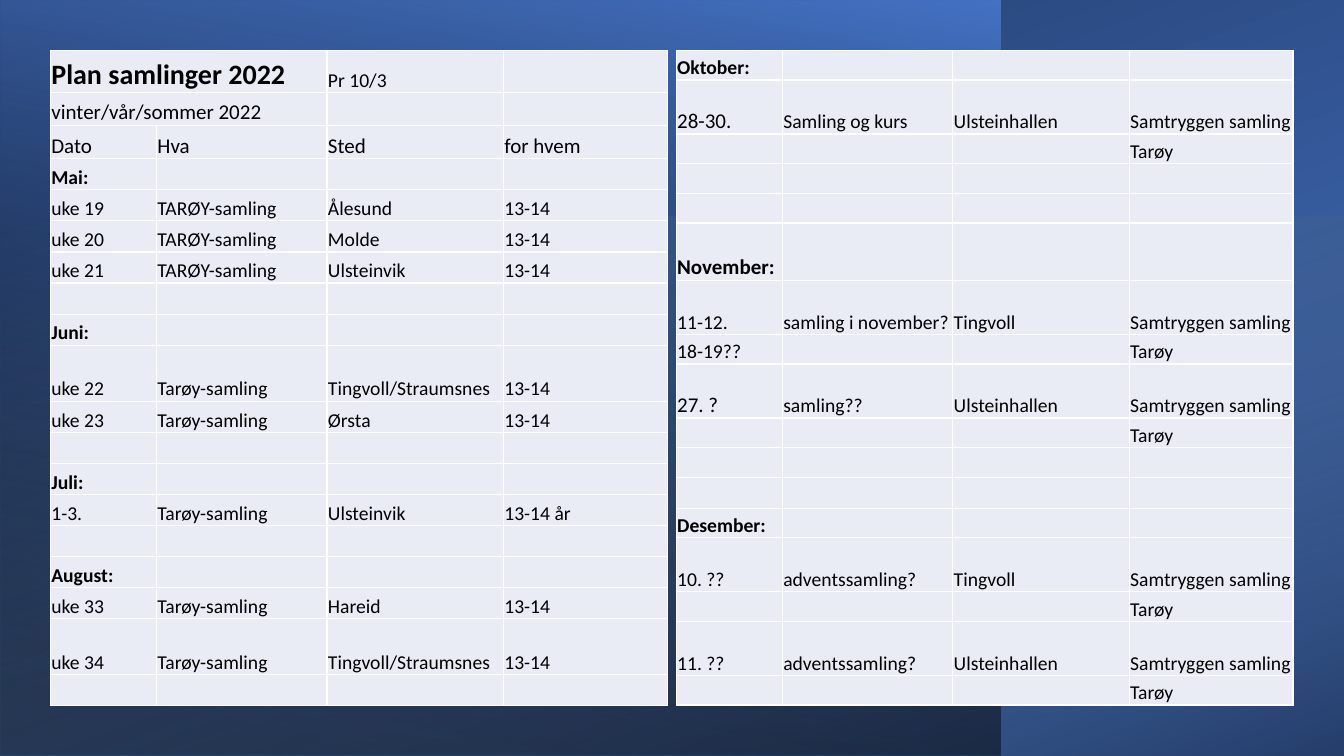
from lxml.etree import SubElement
from pptx import Presentation
from pptx.dml.color import RGBColor
from pptx.enum.shapes import MSO_SHAPE
from pptx.enum.text import MSO_ANCHOR
from pptx.oxml.ns import qn
from pptx.util import Pt

BLUE = RGBColor(0x44, 0x72, 0xC4)
NAVY = RGBColor(0x20, 0x38, 0x64)
SKY = RGBColor(0x9D, 0xC3, 0xE6)
BLACK = RGBColor(0, 0, 0)
WHITE = RGBColor(0xFF, 0xFF, 0xFF)
CELL_FILL = RGBColor(0xE9, 0xEB, 0xF5)

FONT = "Calibri"
TITLE = "Plan samlinger 2022"
SUBTITLE = "vinter/vår/sommer 2022"
BODY_SIZE = 14
LARGE_SIZE = 15
LARGE_TEXTS = {SUBTITLE, "Dato", "Hva", "Sted", "for hvem", "28-30.", "November:", "27. ?"}

COLUMN_WIDTHS = (75.8, 121.8, 126, 117)
TABLE_TOP = 36
SPRING_LEFT = 36
AUTUMN_LEFT = 483

SPRING_ROW = 22.2
SPRING_TALL = 40
SPRING_HEADING = 23.7
SPRING_PLAN = [
    (30, TITLE, "", "Pr 10/3"),
    (SPRING_HEADING, SUBTITLE),
    (SPRING_HEADING, "Dato", "Hva", "Sted", "for hvem"),
    (SPRING_ROW, "Mai:"),
    (SPRING_ROW, "uke 19", "TARØY-samling", "Ålesund", "13-14"),
    (SPRING_ROW, "uke 20", "TARØY-samling", "Molde", "13-14"),
    (SPRING_ROW, "uke 21", "TARØY-samling", "Ulsteinvik", "13-14"),
    (SPRING_ROW,),
    (SPRING_ROW, "Juni:"),
    (SPRING_TALL, "uke 22", "Tarøy-samling", "Tingvoll/Straumsnes", "13-14"),
    (SPRING_ROW, "uke 23", "Tarøy-samling", "Ørsta", "13-14"),
    (SPRING_ROW,),
    (SPRING_ROW, "Juli:"),
    (SPRING_ROW, "1-3.", "Tarøy-samling", "Ulsteinvik", "13-14 år"),
    (SPRING_ROW,),
    (SPRING_ROW, "August:"),
    (SPRING_ROW, "uke 33", "Tarøy-samling", "Hareid", "13-14"),
    (SPRING_TALL, "uke 34", "Tarøy-samling", "Tingvoll/Straumsnes", "13-14"),
    (SPRING_ROW,),
]

AUTUMN_ROW = 21.2
AUTUMN_TALL = 38.6
JOINT = "Samtryggen samling"
SPONSOR_ROW = (AUTUMN_ROW, "", "", "", "Tarøy")
AUTUMN_PLAN = [
    (AUTUMN_ROW, "Oktober:"),
    (AUTUMN_TALL, "28-30.", "Samling og kurs", "Ulsteinhallen", JOINT),
    SPONSOR_ROW,
    (AUTUMN_ROW,),
    (AUTUMN_ROW,),
    (41, "November:"),
    (AUTUMN_TALL, "11-12.", "samling i november?", "Tingvoll", JOINT),
    (AUTUMN_ROW, "18-19??", "", "", "Tarøy"),
    (AUTUMN_TALL, "27. ?", "samling??", "Ulsteinhallen", JOINT),
    SPONSOR_ROW,
    (AUTUMN_ROW,),
    (22, ),
    (AUTUMN_ROW, "Desember:"),
    (AUTUMN_TALL, "10. ??", "adventssamling?", "Tingvoll", JOINT),
    SPONSOR_ROW,
    (AUTUMN_TALL, "11. ??", "adventssamling?", "Ulsteinhallen", JOINT),
    SPONSOR_ROW,
]


def add_gradient_panel(slide, box, rotation, angle, stops):
    shape = slide.shapes.add_shape(MSO_SHAPE.RECTANGLE, *map(Pt, box))
    shape.shadow.inherit = False
    shape.line.fill.background()
    shape.rotation = rotation
    shape._element.spPr.find(qn("a:xfrm")).set("flipH", "1")
    shape.fill.gradient()
    shape.fill.gradient_angle = 360 - angle
    for stop, (position, color, opacity) in zip(shape.fill.gradient_stops, stops):
        stop.position = position / 100
        stop.color.rgb = color
        if opacity < 100:
            color_element = stop._gs.find(qn("a:srgbClr"))
            SubElement(color_element, qn("a:alpha"), val=str(opacity * 1000))


def add_borders(cell):
    properties = cell._tc.get_or_add_tcPr()
    for index, side in enumerate(("lnL", "lnR", "lnT", "lnB")):
        line = properties.makeelement(qn(f"a:{side}"), {"w": str(Pt(1))})
        fill = SubElement(line, qn("a:solidFill"))
        SubElement(fill, qn("a:srgbClr"), val=str(WHITE))
        properties.insert(index, line)


def format_cell(cell, text):
    cell.fill.solid()
    cell.fill.fore_color.rgb = CELL_FILL
    add_borders(cell)
    cell.vertical_anchor = MSO_ANCHOR.BOTTOM
    cell.margin_left = cell.margin_right = cell.margin_top = Pt(0.7)
    cell.margin_bottom = 0
    paragraph = cell.text_frame.paragraphs[0]
    if not text:
        SubElement(paragraph._p, qn("a:endParaRPr"), sz=str(BODY_SIZE * 100))
        return
    paragraph.text = text
    font = paragraph.runs[0].font
    font.name = FONT
    font.color.rgb = BLACK
    font.bold = text == TITLE or text.endswith(":")
    if text == TITLE:
        font.size = Pt(20)
    else:
        font.size = Pt(LARGE_SIZE if text in LARGE_TEXTS else BODY_SIZE)


def add_plan_table(slide, left, plan):
    height = sum(row[0] for row in plan)
    frame = slide.shapes.add_table(
        len(plan), len(COLUMN_WIDTHS), Pt(left), Pt(TABLE_TOP), Pt(sum(COLUMN_WIDTHS)), Pt(height)
    )
    table = frame.table
    table.first_row = False
    table.horz_banding = False
    for column, width in zip(table.columns, COLUMN_WIDTHS):
        column.width = Pt(width)
    for row, (row_height, *texts) in zip(table.rows, plan):
        row.height = Pt(row_height)
        texts += [""] * (len(COLUMN_WIDTHS) - len(texts))
        for cell, text in zip(row.cells, texts):
            format_cell(cell, text)
    return table


def main():
    presentation = Presentation()
    presentation.slide_width = Pt(960)
    presentation.slide_height = Pt(540)
    slide = presentation.slides.add_slide(presentation.slide_layouts[6])

    add_gradient_panel(slide, (210, -210, 540, 960), 270, 200, [(8, BLUE, 100), (100, NAVY, 100)])
    add_gradient_panel(slide, (0, 0, 714.3, 540), 180, 80, [(8, BLACK, 52), (100, BLUE, 100)])
    add_gradient_panel(slide, (287.4, -132.6, 385.2, 960), 270, 20, [(0, SKY, 0), (100, BLACK, 46)])

    spring_table = add_plan_table(slide, SPRING_LEFT, SPRING_PLAN)
    for row in range(2):
        spring_table.cell(row, 0).merge(spring_table.cell(row, 1))
    add_plan_table(slide, AUTUMN_LEFT, AUTUMN_PLAN)

    presentation.save("out.pptx")


if __name__ == "__main__":
    main()
